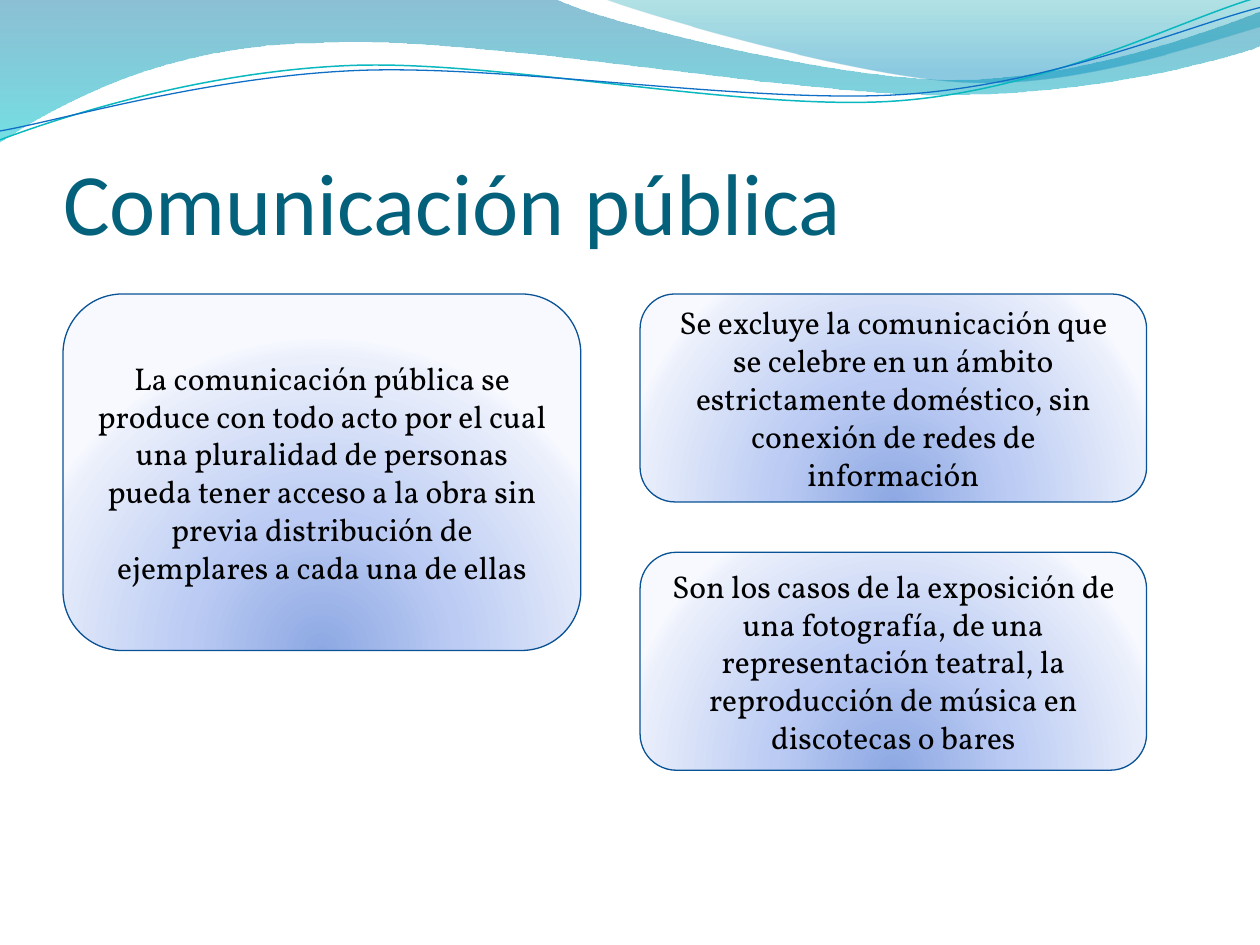
import math

from lxml import etree
from pptx import Presentation
from pptx import util as u
from pptx.dml.color import RGBColor
from pptx.enum import shapes, text
from pptx.oxml import parse_xml
from pptx.oxml.ns import nsdecls, qn

WIDTH, HEIGHT = 10, 7.5
TITLE_COLOR = RGBColor(0x04, 0x61, 0x7B)
BLACK = RGBColor(0, 0, 0)
BORDER = RGBColor(0x09, 0x52, 0x95)
TEAL = RGBColor(0x0A, 0xB8, 0xBF)
BLUE = RGBColor(0x0F, 0x6F, 0xC6)

# Gradient stops: position %, colour, opacity %
DARK_WAVE = [(0, RGBColor(0x00, 0x74, 0xA1), 45), (100, RGBColor(0x00, 0xC6, 0xCF), 55)]
LIGHT_WAVE = [(0, RGBColor(0x00, 0xA1, 0xA9), 30), (80, RGBColor(0x00, 0x8B, 0xBF), 45)]
CARD_GLOW = [(0, RGBColor(0x8D, 0xA8, 0xE3), 100), (43, RGBColor(0xBB, 0xCB, 0xF3), 100),
             (93, RGBColor(0xEA, 0xEF, 0xFB), 100), (100, RGBColor(0xF7, 0xF9, 0xFF), 100)]
DOWNWARD = '<a:lin ang="5400000" scaled="0"/>'
FROM_BELOW = '<a:path path="circle"><a:fillToRect l="50000" t="130000" r="50000" b="-30000"/></a:path>'

# Outlines: a start point, then lines (one point) and Bezier curves (three points)
BANDS = [
    (DARK_WAVE, (0, -0.01), [
        [(4.4, -0.01)],
        [(4.76, 0.17), (6.64, 0.63), (7.58, 0.63)],
        [(8.53, 0.63), (9.58, 0.26), (10, 0.09)],
        [(10.01, 0.36)],
        [(9.83, 0.44), (8.7, 0.76), (7.46, 0.75)],
        [(6.22, 0.75), (3.82, 0.28), (2.57, 0.34)],
        [(1.29, 0.35), (0.46, 0.83), (-0.01, 1.13)],
        [(0, -0.01)]]),
    (LIGHT_WAVE, (4.79, -0.01), [
        [(5.09, 0.11), (6.82, 0.62), (7.69, 0.65)],
        [(8.56, 0.69), (9.61, 0.32), (10, 0.21)],
        [(10, 0)],
        [(4.79, -0.01)]]),
]
STRAND_TILT = -2.7
STRANDS = [
    (TEAL, 0.85, (4.99, 0.58), (0, 1.11), [
        [(0.48, 0.93), (1.58, 0.57), (2.77, 0.52)],
        [(3.95, 0.47), (5.93, 0.89), (7.13, 0.8)],
        [(8.33, 0.71), (9.38, 0.15), (9.98, -0.02)]]),
    (BLUE, 0.75, (5, 0.59), (0, 1.04), [
        [(0.47, 0.96), (1.64, 0.61), (2.83, 0.56)],
        [(4.03, 0.51), (5.97, 0.83), (7.17, 0.75)],
        [(8.36, 0.67), (9.41, 0.21), (10, 0.06)]]),
]

TITLE = "Comunicación pública"
LEFT, LEFT_WIDTH = 0.5, 4.11
RIGHT, RIGHT_WIDTH = 5.08, 4.02
TOP, GAP = 7 / 3, 0.4
LEFT_CARDS = [
    (2.83, "La comunicación pública se produce con todo acto por el cual una pluralidad de "
           "personas pueda tener acceso a la obra sin previa distribución de ejemplares a "
           "cada una de ellas")]
RIGHT_CARDS = [
    (1.65, "Se excluye la comunicación que se celebre en un ámbito estrictamente doméstico, "
           "sin conexión de redes de información"),
    (1.73, "Son los casos de la exposición de una fotografía, de una representación teatral, "
           "la reproducción de música en discotecas o bares")]


def turn(point, center, degrees):
    """Rotate a point clockwise around a center."""
    angle = math.radians(degrees)
    dx, dy = point[0] - center[0], point[1] - center[1]
    return (center[0] + dx * math.cos(angle) - dy * math.sin(angle),
            center[1] + dx * math.sin(angle) + dy * math.cos(angle))


def add_outline(slide, start, segments, close):
    """Build a freeform through all points, then bend each three-point segment."""
    points = [(u.Inches(x), u.Inches(y)) for x, y in sum(segments, [start])]
    builder = slide.shapes.build_freeform(*points[0])
    builder.add_line_segments(points[1:], close=close)
    shape = builder.convert_to_shape()
    shape.shadow.inherit = False

    lines = iter(list(shape._element.iter(qn("a:lnTo"))))
    for segment in segments:
        first, *others = [next(lines) for _ in segment]
        if others:
            curve = etree.Element(qn("a:cubicBezTo"))
            first.addprevious(curve)
            for line in (first, *others):
                curve.append(line[0])
                line.getparent().remove(line)
    return shape


def fill_gradient(shape, stops, direction):
    shape.fill.gradient()
    stop_xml = "".join(
        f'<a:gs pos="{position * 1000}"><a:srgbClr val="{color}">'
        f'<a:alpha val="{opacity * 1000}"/></a:srgbClr></a:gs>'
        for position, color, opacity in stops)
    properties = shape._element.spPr
    properties.replace(properties.find(qn("a:gradFill")), parse_xml(
        f'<a:gradFill {nsdecls("a")} rotWithShape="1"><a:gsLst>{stop_xml}</a:gsLst>'
        f'{direction}</a:gradFill>'))


def write(shape, content, name, size, color, anchor, alignment):
    frame = shape.text_frame
    frame.word_wrap = True
    frame.vertical_anchor = anchor
    paragraph = frame.paragraphs[0]
    paragraph.text = content
    paragraph.alignment = alignment
    paragraph.font.name = name
    paragraph.font.size = u.Pt(size)
    paragraph.font.color.rgb = color


def add_cards(slide, left, width, cards):
    """Stack a column of cards downward from the common top edge."""
    top = TOP
    for height, content in cards:
        card = slide.shapes.add_shape(
            shapes.MSO_SHAPE.ROUNDED_RECTANGLE,
            *(u.Inches(length) for length in (left, top, width, height)))
        card.shadow.inherit = False
        fill_gradient(card, CARD_GLOW, FROM_BELOW)
        card.line.color.rgb = BORDER
        card.line.width = u.Pt(0.75)
        write(card, content, "Vollkorn", 18, BLACK,
              text.MSO_ANCHOR.MIDDLE, text.PP_ALIGN.CENTER)
        top += height + GAP


def main():
    presentation = Presentation()
    presentation.slide_width, presentation.slide_height = u.Inches(WIDTH), u.Inches(HEIGHT)
    slide = presentation.slides.add_slide(presentation.slide_layouts[6])

    for stops, start, segments in BANDS:
        band = add_outline(slide, start, segments, close=True)
        fill_gradient(band, stops, DOWNWARD)
        band.line.fill.background()
    for color, width, center, start, segments in STRANDS:
        level = [[turn(point, center, -STRAND_TILT) for point in segment]
                 for segment in segments]
        strand = add_outline(slide, turn(start, center, -STRAND_TILT), level, close=False)
        strand.rotation = STRAND_TILT
        strand.fill.background()
        strand.line.color.rgb = color
        strand.line.width = u.Pt(width)

    title = slide.shapes.add_textbox(
        u.Inches(LEFT), u.Inches(0.76), u.Inches(9.08), u.Inches(1.25))
    frame = title.text_frame
    frame.margin_left = frame.margin_right = frame.margin_bottom = 0
    write(title, TITLE, "Calibri", 50, TITLE_COLOR,
          text.MSO_ANCHOR.BOTTOM, text.PP_ALIGN.LEFT)

    add_cards(slide, LEFT, LEFT_WIDTH, LEFT_CARDS)
    add_cards(slide, RIGHT, RIGHT_WIDTH, RIGHT_CARDS)
    presentation.save("out.pptx")


if __name__ == "__main__":
    main()
